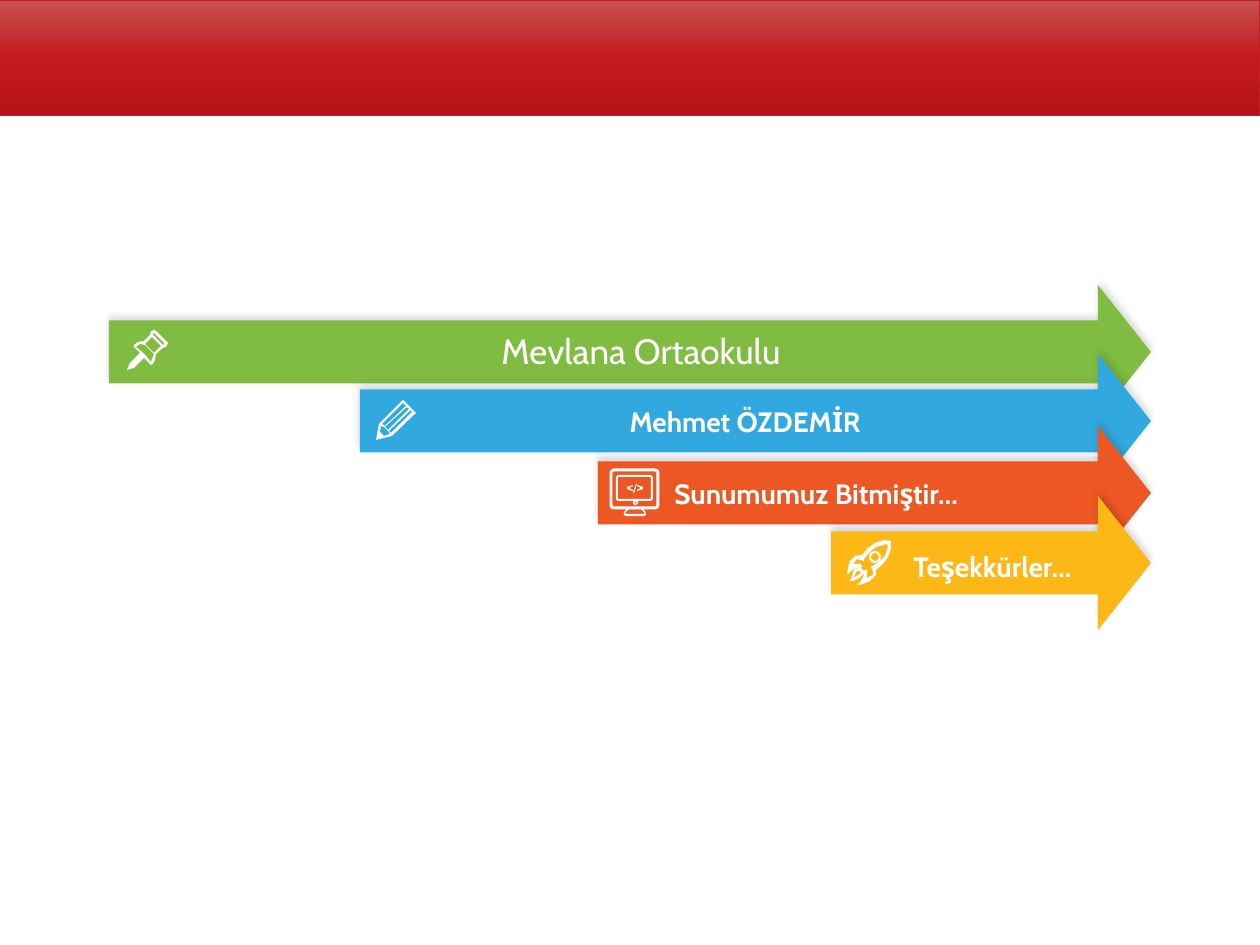
"""Build the closing slide: a red header and four stacked arrows with icons."""
import copy
import dataclasses
import typing

import lxml.etree
import pptx
import pptx.dml.color
import pptx.enum.shapes
import pptx.enum.text
import pptx.oxml.ns
import pptx.util

EMU_PER_PX = 914400 / 126
WHITE = "FFFFFF"
ARROW_TIP, HEAD_LENGTH, HEAD_HEIGHT, BODY_HEIGHT = 1151, 53, 134, 63
SHAPES = pptx.enum.shapes.MSO_SHAPE
ALIGN = pptx.enum.text.PP_ALIGN
Contour = list[tuple[int, int]]


class Box(typing.NamedTuple):
    left: int
    top: int
    width: int
    height: int


@dataclasses.dataclass
class Banner:
    left: int
    top: int
    color: str
    text: str
    text_box: Box
    size: int = 16
    bold: bool = True
    align: ALIGN = ALIGN.LEFT


BANNERS = [
    Banner(109, 285, "7FBC41", "Mevlana Ortaokulu", Box(180, 323, 922, 55), 20, False, ALIGN.CENTER),
    Banner(360, 354, "31A8DF", "Mehmet ÖZDEMİR", Box(421, 398, 648, 47), align=ALIGN.CENTER),
    Banner(598, 426, "EC5724", "Sunumumuz Bitmiştir…", Box(662, 470, 449, 47)),
    Banner(831, 496, "FDB817", "Teşekkürler…", Box(901, 543, 215, 47)),
]

PIN = [
    [(156, 354), (163, 348), (166, 347), (168, 343), (166, 341), (156, 331), (154, 330), (151, 331),
     (150, 335), (144, 341), (138, 342), (134, 345), (134, 347), (140, 353), (130, 363), (127, 370),
     (134, 368), (144, 358), (151, 365), (153, 364), (155, 360)],
    [(155, 334), (164, 343), (164, 345), (163, 345), (153, 335), (153, 333)],
    [(154, 353), (145, 344), (152, 337), (161, 346)],
    [(146, 356), (142, 352), (136, 347), (140, 344), (145, 345), (154, 354), (151, 362)],
]
PENCIL = [
    [(416, 413), (403, 400), (379, 424), (376, 440), (392, 436)],
    [(391, 433), (389, 431), (411, 410), (412, 412)],
    [(384, 436), (380, 432), (381, 426), (384, 427), (389, 432), (390, 434)],
    [(409, 409), (388, 430), (385, 427), (407, 407)],
    [(403, 403), (406, 406), (385, 426), (382, 424)],
]
MONITOR_STAND = [
    [(627, 509), (624, 512), (624, 515), (626, 516), (644, 516), (646, 515), (646, 512), (643, 509)],
    [(629, 509), (641, 509), (645, 513), (643, 514), (626, 514), (625, 513)],
]
LEFT_BRACKET = [(627, 489), (633, 491), (633, 490), (629, 488), (633, 486), (633, 485), (627, 487)]
RIGHT_BRACKET = [(2 * 635 - x, y) for x, y in LEFT_BRACKET]
SLASH = [(636, 484), (637, 484), (634, 493), (633, 493)]
ROCKET = [
    [(847, 575), (848, 568), (850, 561), (855, 556), (862, 555), (868, 548), (875, 543), (884, 540),
     (891, 541), (891, 549), (888, 557), (883, 564), (876, 570), (876, 575), (870, 581), (863, 584),
     (857, 585), (861, 581), (864, 575), (863, 574), (858, 569), (857, 568), (851, 571)],
    [(876, 547), (871, 551), (864, 559), (864, 561), (857, 559), (853, 564), (861, 564), (862, 567),
     (861, 568), (864, 571), (865, 570), (867, 570), (867, 578), (873, 575), (873, 571), (871, 567),
     (880, 561), (885, 556), (888, 547), (887, 544)],
]
FLAME = [
    [(850, 581), (851, 579), (854, 570), (858, 568), (862, 570), (863, 574), (861, 577), (853, 581)],
    [(860, 571), (857, 571), (853, 578), (860, 574), (861, 573)],
]
ICON_OUTLINES = [PIN, PENCIL, MONITOR_STAND, [LEFT_BRACKET], [SLASH], [RIGHT_BRACKET], ROCKET, FLAME]


def px(value: float) -> int:
    """Convert pixels to EMU."""
    return round(value * EMU_PER_PX)


def rgb(color: str) -> pptx.dml.color.RGBColor:
    """Turn a hex string into a colour."""
    return pptx.dml.color.RGBColor.from_string(color)


def add_plain_shape(slide, kind: SHAPES, box: Box):
    """Add a preset shape without fill, line or shadow."""
    shape = slide.shapes.add_shape(kind, *map(px, box))
    shape.shadow.inherit = False
    shape.fill.background()
    shape.line.fill.background()
    return shape


def fill_solid(shape, color: str) -> None:
    """Fill a shape with one colour."""
    shape.fill.solid()
    shape.fill.fore_color.rgb = rgb(color)


def add_soft_shadow(shape) -> None:
    """Give a shape a faint shadow cast upwards."""
    effects = shape._element.spPr.find(pptx.oxml.ns.qn("a:effectLst"))
    shadow = lxml.etree.SubElement(
        effects, pptx.oxml.ns.qn("a:outerShdw"), blurRad=str(pptx.util.Pt(4)),
        dist=str(pptx.util.Pt(3)), dir="16200000", algn="b", rotWithShape="0")
    color = lxml.etree.SubElement(shadow, pptx.oxml.ns.qn("a:srgbClr"), val="000000")
    lxml.etree.SubElement(color, pptx.oxml.ns.qn("a:alpha"), val="15000")


def add_arrow(slide, banner: Banner) -> None:
    """Draw the arrow of a banner."""
    box = Box(banner.left, banner.top, ARROW_TIP - banner.left, HEAD_HEIGHT)
    arrow = add_plain_shape(slide, SHAPES.RIGHT_ARROW, box)
    arrow.adjustments[0] = BODY_HEIGHT / HEAD_HEIGHT
    arrow.adjustments[1] = HEAD_LENGTH / HEAD_HEIGHT
    fill_solid(arrow, banner.color)
    add_soft_shadow(arrow)


def add_label(slide, banner: Banner) -> None:
    """Write the text of a banner."""
    frame = slide.shapes.add_textbox(*map(px, banner.text_box)).text_frame
    frame.word_wrap = True
    paragraph = frame.paragraphs[0]
    paragraph.text = banner.text
    paragraph.alignment = banner.align
    paragraph.font.name = "Cabin"
    paragraph.font.size = pptx.util.Pt(banner.size)
    paragraph.font.bold = banner.bold
    paragraph.font.color.rgb = rgb(WHITE)


def add_outline(slide, contours: list[Contour]) -> None:
    """Draw a white outline whose later contours are holes."""
    builder = slide.shapes.build_freeform(*contours[0][0], scale=EMU_PER_PX)
    for index, contour in enumerate(contours):
        if index:
            builder.move_to(*contour[0])
        builder.add_line_segments(contour[1:], close=True)
    shape = builder.convert_to_shape()
    shape.shadow.inherit = False
    shape.line.fill.background()
    fill_solid(shape, WHITE)


def add_screen(slide, box: Box, stroke: int) -> None:
    """Draw a white rounded frame of the monitor."""
    shape = add_plain_shape(slide, SHAPES.ROUNDED_RECTANGLE, box)
    shape.adjustments[0] = 0.08
    shape.line.color.rgb = rgb(WHITE)
    shape.line.width = px(stroke)


def add_ring(slide, box: Box, thickness: float) -> None:
    """Draw a white ring with a thickness relative to its size."""
    shape = add_plain_shape(slide, SHAPES.DONUT, box)
    shape.adjustments[0] = thickness
    fill_solid(shape, WHITE)


def add_header(slide) -> None:
    """Draw the red gradient band."""
    header = add_plain_shape(slide, SHAPES.RECTANGLE, Box(-1, 0, 1261, 116))
    header.fill.gradient()
    header.fill.gradient_angle = 270
    first_stop = header._element.spPr.find(".//" + pptx.oxml.ns.qn("a:gs"))
    first_stop.addnext(copy.deepcopy(first_stop))
    colors = ["C65051", "C31B1F", "B41215"]
    for index, (stop, color) in enumerate(zip(header.fill.gradient_stops, colors)):
        stop.position = index / 2
        stop.color.rgb = rgb(color)
    header.line.color.rgb = rgb("BB2326")
    header.line.width = pptx.util.Pt(0.5)


def main() -> None:
    """Build and save the presentation."""
    presentation = pptx.Presentation()
    presentation.slide_width, presentation.slide_height = px(1260), px(945)
    slide = presentation.slides.add_slide(presentation.slide_layouts[6])
    for banner in BANNERS:
        add_arrow(slide, banner)
    add_screen(slide, Box(611, 470, 47, 38), 3)
    add_screen(slide, Box(617, 476, 35, 24), 2)
    for contours in ICON_OUTLINES:
        add_outline(slide, contours)
    add_ring(slide, Box(633, 500, 5, 5), 0.3)
    add_ring(slide, Box(869, 551, 12, 12), 0.17)
    for banner in BANNERS:
        add_label(slide, banner)
    add_header(slide)
    presentation.save("out.pptx")


if __name__ == "__main__":
    main()
